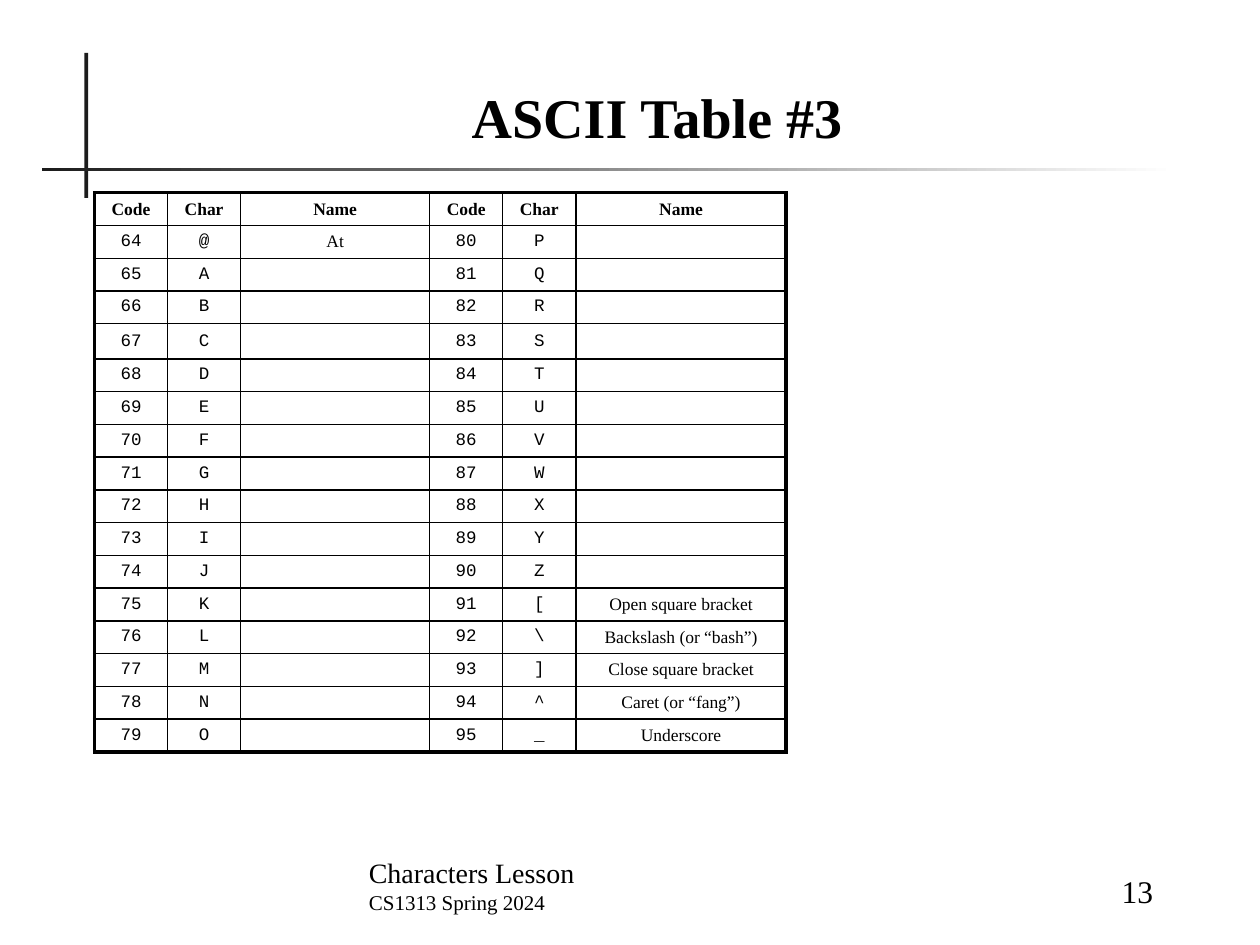
from lxml import etree
from pptx import Presentation
from pptx import util as u
from pptx.dml.color import RGBColor
from pptx.enum import shapes, text
from pptx.oxml import ns

TITLE = "ASCII Table #3"
FOOTER = ("Characters Lesson", "CS1313 Spring 2024")
PAGE_NUMBER = "13"
HEADINGS = ("Code", "Char", "Name") * 2
FIRST_CODE, CODES_PER_HALF = 64, 16
NAMES = {
    64: "At",
    91: "Open square bracket",
    92: "Backslash (or “bash”)",
    93: "Close square bracket",
    94: "Caret (or “fang”)",
    95: "Underscore",
}
COLUMN_WIDTHS = (0.58, 0.58, 1.5, 0.58, 0.58, 1.67)
ROW_HEIGHT, TALL_ROW, TALL_HEIGHT = 0.26, 4, 0.28


class Theme:
    ink = RGBColor(0, 0, 0)
    bar = RGBColor(0x1C, 0x1C, 0x1C)
    paper = RGBColor(0xFF, 0xFF, 0xFF)
    serif, mono = "Times New Roman", "Courier New"
    title, number, lesson, course, cell = 32, 18, 16, 12, 10
    outer_line, inner_line = 2.25, 1


def inches(*values):
    return [u.Inches(value) for value in values]


def style(para, size, face=Theme.serif, bold=False, align=text.PP_ALIGN.LEFT):
    para.alignment = align
    for span in para.runs:
        span.font.size = u.Pt(size)
        span.font.name = face
        span.font.bold = bold
        span.font.color.rgb = Theme.ink


def add_bar(page, *place):
    bar = page.shapes.add_shape(shapes.MSO_SHAPE.RECTANGLE, *inches(*place))
    bar.shadow.inherit = False
    bar.line.fill.background()
    return bar.fill


def add_caption(page, place, lines, sizes, align):
    frame = page.shapes.add_textbox(*inches(*place)).text_frame
    frame.word_wrap = True
    frame.vertical_anchor = text.MSO_ANCHOR.BOTTOM
    frame.text = "\n".join(lines)
    for para, size in zip(frame.paragraphs, sizes):
        style(para, size, align=align)


def add_border(cell, side, width):
    line = etree.SubElement(cell._tc.get_or_add_tcPr(), ns.qn(f"a:ln{side}"), w=str(u.Pt(width)))
    fill = etree.SubElement(line, ns.qn("a:solidFill"))
    etree.SubElement(fill, ns.qn("a:srgbClr"), val=str(Theme.ink))


def ascii_rows():
    yield HEADINGS
    for first in range(FIRST_CODE, FIRST_CODE + CODES_PER_HALF):
        yield [value for code in (first, first + CODES_PER_HALF)
               for value in (str(code), chr(code), NAMES.get(code, ""))]


def fill_cell(cell, value, heading, is_name):
    cell.margin_top = cell.margin_bottom = u.Inches(0.04)
    cell.vertical_anchor = text.MSO_ANCHOR.MIDDLE
    cell.text = value
    para = cell.text_frame.paragraphs[0]
    face = Theme.serif if heading or is_name else Theme.mono
    style(para, Theme.cell, face, heading, text.PP_ALIGN.CENTER)
    if not value:
        etree.SubElement(para._p, ns.qn("a:endParaRPr"), sz=str(Theme.cell * 100))


def add_ascii_table(page):
    rows = list(ascii_rows())
    last_row, last_column = len(rows) - 1, len(HEADINGS) - 1
    heights = [TALL_HEIGHT if r == TALL_ROW else ROW_HEIGHT for r in range(len(rows))]
    place = inches(0.75, 1.53, sum(COLUMN_WIDTHS), sum(heights))
    table = page.shapes.add_table(len(rows), len(HEADINGS), *place).table
    table.first_row = table.horz_banding = False
    for column, width in zip(table.columns, COLUMN_WIDTHS):
        column.width = u.Inches(width)
    for r, values in enumerate(rows):
        table.rows[r].height = u.Inches(heights[r])
        for c, value in enumerate(values):
            cell = table.cell(r, c)
            fill_cell(cell, value, r == 0, HEADINGS[c] == "Name")
            edges = {"L": c == 0, "R": c == last_column, "T": r == 0, "B": r == last_row}
            for side, outer in edges.items():
                add_border(cell, side, Theme.outer_line if outer else Theme.inner_line)
            cell.fill.background()


def main():
    deck = Presentation()
    deck.slide_width, deck.slide_height = inches(10, 7.5)
    page = deck.slides.add_slide(deck.slide_layouts[5])

    upright = add_bar(page, 0.67, 0.42, 0.03, 1.15)
    upright.solid()
    upright.fore_color.rgb = Theme.bar
    rule = add_bar(page, 0.33, 1.33, 9, 0.03)
    rule.gradient()
    rule.gradient_angle = 0
    for stop, color in zip(rule.gradient_stops, (Theme.bar, Theme.paper)):
        stop.color.rgb = color

    add_caption(page, (7.83, 6.77, 1.42, 0.5), [PAGE_NUMBER], [Theme.number], text.PP_ALIGN.RIGHT)
    add_caption(page, (2.83, 6.81, 4.83, 0.5), FOOTER, (Theme.lesson, Theme.course),
                text.PP_ALIGN.LEFT)
    add_ascii_table(page)

    title = page.shapes.title
    title.left, title.top, title.width, title.height = inches(0.83, 0.5, 8.77, 0.74)
    title.text_frame.text = TITLE
    title.text_frame.vertical_anchor = text.MSO_ANCHOR.BOTTOM
    style(title.text_frame.paragraphs[0], Theme.title, bold=True, align=text.PP_ALIGN.CENTER)

    deck.save("out.pptx")


if __name__ == "__main__":
    main()
